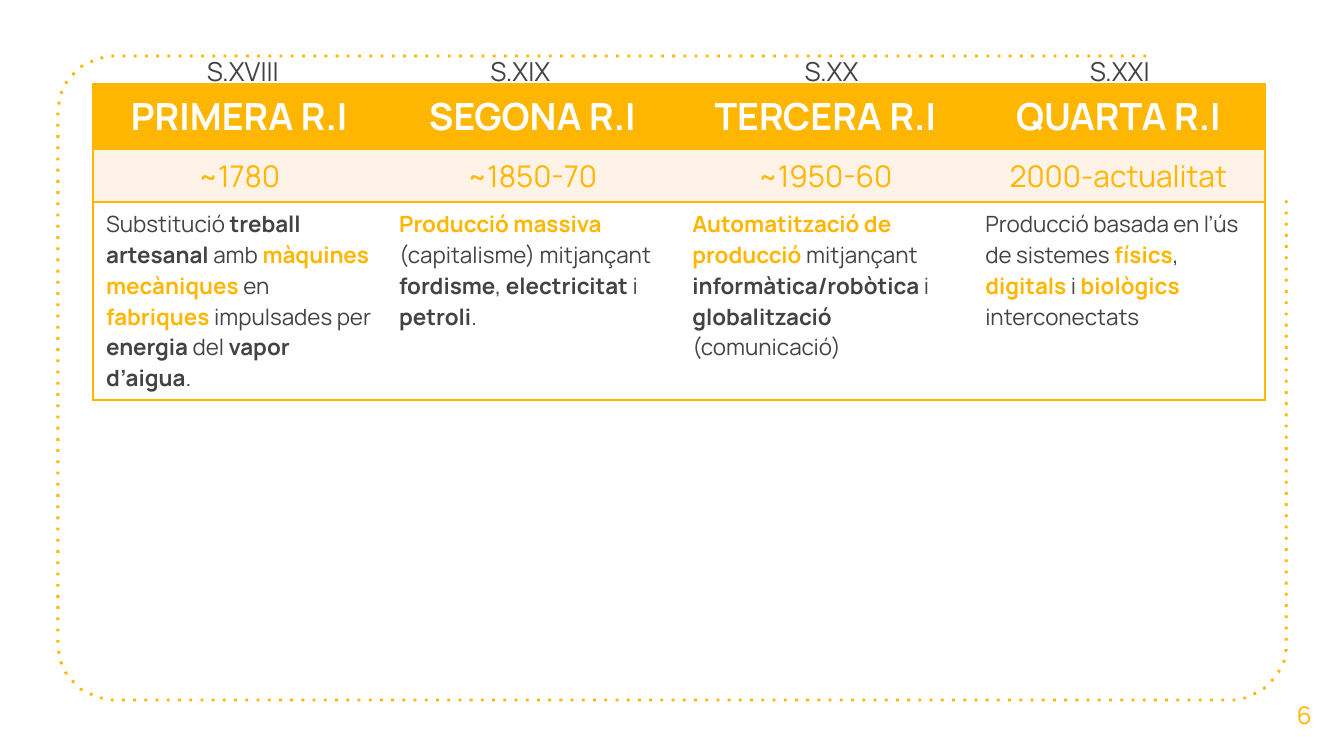
import math
from dataclasses import dataclass
from typing import Any

import pptx
import pptx.dml.color
import pptx.enum.text
import pptx.oxml
import pptx.oxml.ns
import pptx.util

Pt = pptx.util.Pt
RGBColor = pptx.dml.color.RGBColor
Align = pptx.enum.text.PP_ALIGN
Anchor = pptx.enum.text.MSO_ANCHOR
Fit = pptx.enum.text.MSO_AUTO_SIZE

GOLD = RGBColor(0xFF, 0xB6, 0x00)
CREAM = RGBColor(0xFF, 0xF3, 0xE7)
GREY = RGBColor(0x43, 0x43, 0x43)
WHITE = RGBColor(0xFF, 0xFF, 0xFF)
FONT = "Manrope"


@dataclass(frozen=True)
class Run:
    text: str
    color: RGBColor = GREY
    bold: bool = False


@dataclass(frozen=True)
class Era:
    name: str
    date: str
    body: list[Run]


@dataclass(frozen=True)
class Label:
    text: str
    left: float
    width: float


@dataclass(frozen=True)
class Row:
    height: float
    size: float
    fill: RGBColor
    align: Any


def bold(text: str) -> Run:
    return Run(text, bold=True)


def key(text: str) -> Run:
    return Run(text, GOLD, True)


ERAS = [
    Era("PRIMERA R.I", "~1780", [
        Run("Substitució "), bold("treball artesanal"), Run(" amb "),
        key("màquines mecàniques"), Run(" en "), key("fabriques"),
        Run(" impulsades per "), bold("energia"), Run(" del "),
        bold("vapor d’aigua"), Run(".")]),
    Era("SEGONA R.I", "~1850-70", [
        key("Producció massiva "), Run("(capitalisme) mitjançant "),
        bold("fordisme"), Run(", "), bold("electricitat"), Run(" i "),
        bold("petroli"), Run(".")]),
    Era("TERCERA R.I", "~1950-60", [
        key("Automatització de producció "), Run("mitjançant "),
        bold("informàtica/robòtica"), Run(" i "), bold("globalització"),
        Run(" (comunicació)")]),
    Era("QUARTA R.I", "2000-actualitat", [
        Run("Producció basada en l’ús de sistemes "), key("físics"),
        Run(", "), key("digitals"), Run(" i "), key("biològics"),
        Run(" interconectats")]),
]
LABELS = [
    Label("S.XVIII", 103.7, 57),
    Label("S.XIX", 255.6, 49),
    Label("S.XX", 424, 45),
    Label("S.XXI", 576.7, 49),
]
ROWS = [
    Row(34.8, 20, GOLD, Align.CENTER),
    Row(28.6, 16, CREAM, Align.CENTER),
    Row(106, 12, WHITE, Align.LEFT),
]


def put(item: Any, form: dict[str, Any]) -> None:
    for name, value in form.items():
        setattr(item, name, value)


def write(frame: Any, runs: list[Run], size: float, align: Any) -> None:
    line = frame.paragraphs[0]
    line.alignment = align
    for run in runs:
        part = line.add_run()
        part.text = run.text
        put(part.font, {"name": FONT, "size": Pt(size), "bold": run.bold})
        part.font.color.rgb = run.color


def add_text(slide: Any, box: tuple[float, ...], run: Run, size: float,
             align: Any, form: dict[str, Any]) -> None:
    frame = slide.shapes.add_textbox(*map(Pt, box)).text_frame
    put(frame, form)
    write(frame, [run], size, align)


def add_frame(slide: Any) -> None:
    left, top, right, low, curve = 31, 30, 689, 375, 30
    turns = [(left + curve, top + curve, 270),
             (left + curve, low - curve, 180),
             (right - curve, low - curve, 90)]
    points = [(x + curve * math.cos(math.radians(start - step)),
               y + curve * math.sin(math.radians(start - step)))
              for x, y, start in turns for step in range(0, 91, 6)]
    points.append((right, 105))
    pen = slide.shapes.build_freeform(614, top, scale=Pt(1))
    pen.add_line_segments(points, close=False)
    shape = pen.convert_to_shape()
    shape.shadow.inherit = False
    shape.fill.background()
    shape.line.color.rgb = GOLD
    shape.line.width = Pt(1.5)
    dash = pptx.oxml.parse_xml(
        f'<a:prstDash {pptx.oxml.ns.nsdecls("a")} val="dot"/>')
    shape.line.fill._xPr.append(dash)


def add_edges(cell: Any, first: bool, last: bool) -> None:
    props = cell._tc.get_or_add_tcPr()
    sides = {"L": first, "R": last, "T": True, "B": True}
    for spot, (side, shown) in enumerate(sides.items()):
        paint = (f'<a:solidFill><a:srgbClr val="{GOLD}"/></a:solidFill>'
                 if shown else "<a:noFill/>")
        edge = pptx.oxml.parse_xml(
            f'<a:ln{side} {pptx.oxml.ns.nsdecls("a")} w="{Pt(1)}">'
            f'{paint}</a:ln{side}>')
        props.insert(spot, edge)


def add_grid(slide: Any) -> None:
    wide = 157
    high = sum(row.height for row in ROWS)
    grid = slide.shapes.add_table(
        len(ROWS), len(ERAS), Pt(49.7), Pt(45), Pt(wide * len(ERAS)),
        Pt(high)).table
    put(grid, {"first_row": False, "horz_banding": False})
    for y, row in enumerate(ROWS):
        grid.rows[y].height = Pt(row.height)
    for x, era in enumerate(ERAS):
        grid.columns[x].width = Pt(wide)
        texts = [[Run(era.name, WHITE, True)], [Run(era.date, GOLD)], era.body]
        for y, (row, runs) in enumerate(zip(ROWS, texts)):
            cell = grid.cell(y, x)
            cell.fill.solid()
            cell.fill.fore_color.rgb = row.fill
            add_edges(cell, x == 0, x == len(ERAS) - 1)
            write(cell.text_frame, runs, row.size, row.align)


def main() -> None:
    deck = pptx.Presentation()
    put(deck, {"slide_width": Pt(720), "slide_height": Pt(405)})
    slide = deck.slides.add_slide(deck.slide_layouts[6])
    add_frame(slide)
    add_text(slide, (677.5, 361.5, 42.5, 43), Run("6", GOLD), 13,
             Align.CENTER,
             {"word_wrap": True, "vertical_anchor": Anchor.MIDDLE})
    add_grid(slide)
    for label in LABELS:
        add_text(slide, (label.left, 26, label.width, 24.5),
                 Run(label.text), 14, Align.LEFT,
                 {"word_wrap": False, "auto_size": Fit.SHAPE_TO_FIT_TEXT})
    deck.save("out.pptx")


if __name__ == "__main__":
    main()
